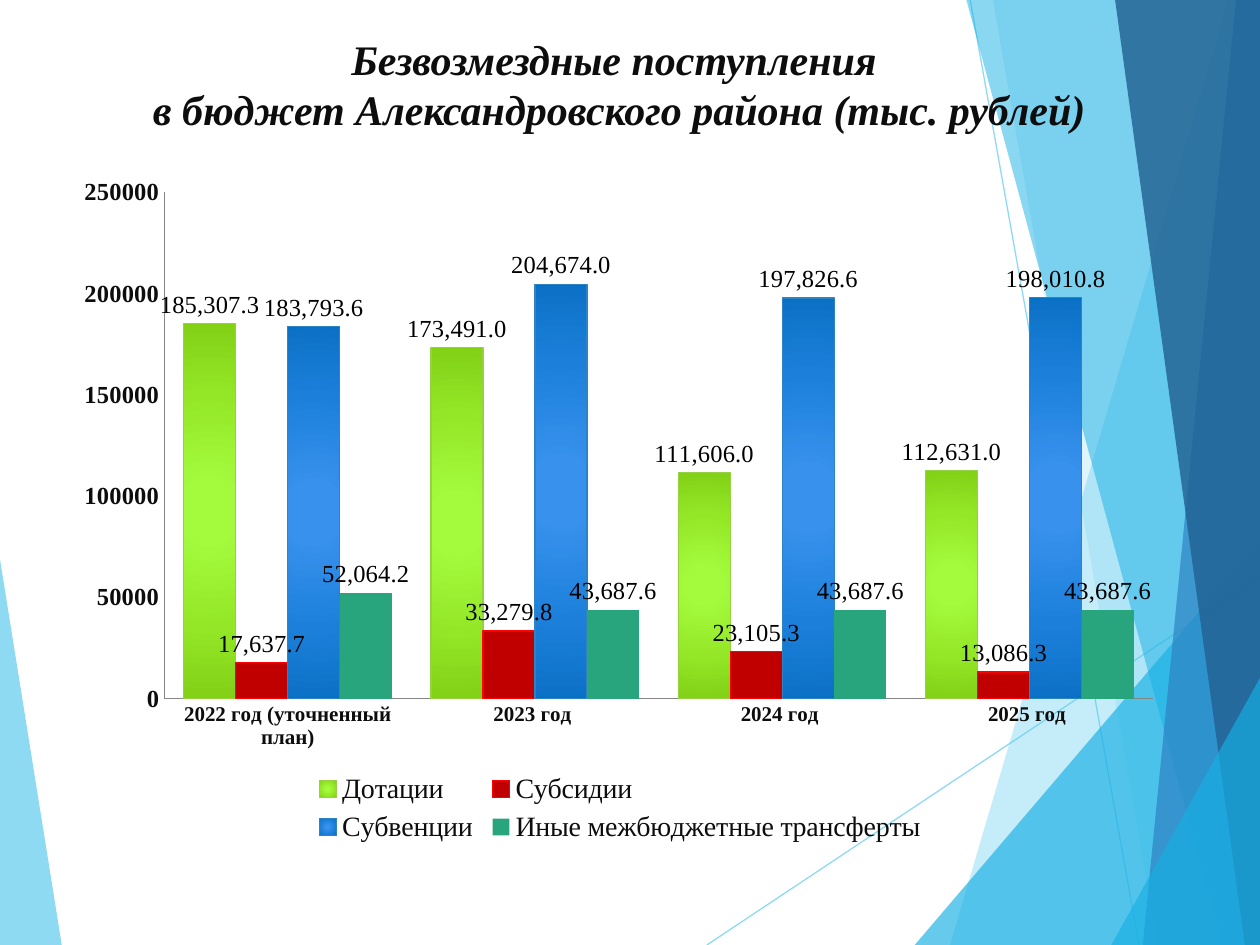
from dataclasses import dataclass

from pptx import Presentation
from pptx import util as u
from pptx.chart.data import CategoryChartData
from pptx.dml.color import RGBColor
from pptx.enum import chart as charts, shapes, text
from pptx.oxml import parse_xml
from pptx.oxml.ns import nsdecls, qn

PX = 9144  # EMU, one hundred px to the inch
WIDTH, HEIGHT = 1000, 750


@dataclass(frozen=True)
class Theme:
    font: str = "Times New Roman"
    ink: str = "0D0D0D"
    label: str = "000000"
    axis: str = "868686"
    sky: str = "5FCBEF"
    cyan: str = "17B0E4"
    blue: str = "2E83C3"
    navy: str = "226292"
    title_size: int = 24
    legend_size: int = 16
    value_size: int = 14
    category_size: int = 12


@dataclass(frozen=True)
class Facet:
    color: str
    opacity: int
    points: tuple[tuple[int, int], ...]


@dataclass(frozen=True)
class Ray:
    start: tuple[int, int]
    end: tuple[int, int]


@dataclass(frozen=True)
class Series:
    name: str
    values: tuple[float, ...]
    stops: tuple[str, ...]
    outline: str | None = None


THEME = Theme()
STOP_PLACES = (0, 15, 62, 97, 100)

LEFT_FACET = Facet(THEME.sky, 70, ((0, 444), (49, 750), (0, 750)))
RAYS = (Ray((561, 750), (1000, 458)), Ray((770, 0), (904, 750)))
RIGHT_FACETS = (
    Facet(THEME.sky, 36, ((975, 0), (754, 750), (1000, 750), (1000, 0))),
    Facet(THEME.sky, 20, ((788, 0), (919, 750), (1000, 750), (1000, 0))),
    Facet(THEME.cyan, 66, ((726, 750), (1000, 429), (1000, 750))),
    Facet(THEME.cyan, 50, ((767, 0), (970, 750), (1000, 750), (1000, 0))),
    Facet(THEME.blue, 70, ((981, 0), (907, 750), (1000, 750), (1000, 0))),
    Facet(THEME.navy, 82, ((885, 0), (988, 750), (1000, 750), (1000, 0))),
    Facet(THEME.cyan, 66, ((882, 750), (1000, 538), (1000, 750))),
)

TITLE = ("Безвозмездные поступления ", "в бюджет Александровского района (тыс. рублей)")
YEARS = ("2022 год (уточненный план)", "2023 год ", "2024 год ", "2025 год ")
SERIES = (
    Series("Дотации", (185307.3, 173491, 111606, 112631),
           ("A5FC3E", "A4FB3E", "93E726", "83D218", "81D30C"), "96D141"),
    Series("Субсидии", (17637.7, 33279.8, 23105.3, 13086.3), ("C00000",), "FF0000"),
    Series("Субвенции", (183793.6, 204674, 197826.6, 198010.8),
           ("3792EE", "3791ED", "1C80DB", "0D72C7", "0070C4"), THEME.blue),
    Series("Иные межбюджетные трансферты", (52064.2, 43687.6, 43687.6, 43687.6), ("29A57D",)),
)


def rgb(color: str) -> RGBColor:
    return RGBColor.from_string(color)


def set_font(font, size: int, color: str, bold: bool = False, italic: bool = False) -> None:
    font.name, font.size, font.bold, font.italic = THEME.font, u.Pt(size), bold, italic
    font.color.rgb = rgb(color)


def set_opacity(color_owner, percent: int) -> None:
    for color in color_owner.iter(qn("a:srgbClr")):
        color.append(parse_xml(f'<a:alpha {nsdecls("a")} val="{percent * 1000}"/>'))


def draw_facet(page, facet: Facet) -> None:
    builder = page.shapes.build_freeform(*facet.points[0], scale=PX)
    builder.add_line_segments(facet.points[1:], close=True)
    shape = builder.convert_to_shape()
    shape.shadow.inherit = False
    shape.fill.solid()
    shape.fill.fore_color.rgb = rgb(facet.color)
    set_opacity(shape._element.spPr, facet.opacity)
    shape.line.fill.background()


def draw_ray(page, ray: Ray) -> None:
    ends = [value * PX for value in ray.start + ray.end]
    line = page.shapes.add_connector(shapes.MSO_CONNECTOR.STRAIGHT, *ends)
    line.line.color.rgb = rgb(THEME.sky)
    line.line.width = u.Pt(0.75)
    set_opacity(line._element.spPr, 70)
    line._element.spPr.append(parse_xml(f'<a:effectLst {nsdecls("a")}/>'))


def write_title(page) -> None:
    title = page.shapes.title
    title.left, title.top, title.width, title.height = (n * PX for n in (35, 21, 913, 91))
    frame = title.text_frame
    frame.auto_size = text.MSO_AUTO_SIZE.NONE
    frame.word_wrap = True
    frame.vertical_anchor = text.MSO_ANCHOR.MIDDLE
    for index, line in enumerate(TITLE):
        para = frame.add_paragraph() if index else frame.paragraphs[0]
        para.alignment = text.PP_ALIGN.CENTER
        span = para.add_run()
        span.text = line
        set_font(span.font, THEME.title_size, THEME.ink, bold=True, italic=True)
    # Bring the title in front of the facets
    title._element.getparent().append(title._element)


def place(element, index: int, x: float, y: float, w: float, h: float, inner: bool = False) -> None:
    """Fix a chart part at fractions of the chart area."""
    for old in element.findall(qn("c:layout")):
        element.remove(old)
    target = '<c:layoutTarget val="inner"/>' if inner else ""
    element.insert(index, parse_xml(
        f'<c:layout {nsdecls("c")}><c:manualLayout>{target}'
        '<c:xMode val="edge"/><c:yMode val="edge"/>'
        f'<c:x val="{x}"/><c:y val="{y}"/><c:w val="{w}"/><c:h val="{h}"/>'
        '</c:manualLayout></c:layout>'))


def fill_radial(fill_owner, stops: tuple[str, ...]) -> None:
    """Swap the solid fill for a gradient running out from the centre."""
    marks = "".join(f'<a:gs pos="{place * 1000}"><a:srgbClr val="{color}"/></a:gs>'
                    for place, color in zip(STOP_PLACES, stops))
    solid = fill_owner.find(qn("a:solidFill"))
    fill_owner.replace(solid, parse_xml(
        f'<a:gradFill {nsdecls("a")} rotWithShape="1"><a:gsLst>{marks}</a:gsLst>'
        '<a:path path="circle"><a:fillToRect l="50000" t="50000" r="50000" b="50000"/>'
        '</a:path></a:gradFill>'))


def style_series(plot_series, series: Series) -> None:
    look = plot_series.format
    look.fill.solid()
    look.fill.fore_color.rgb = rgb(series.stops[0])
    if series.outline:
        look.line.color.rgb = rgb(series.outline)
        look.line.width = u.Pt(0.75)
    if len(series.stops) > 1:
        fill_radial(plot_series._element.spPr, series.stops)
    labels = plot_series.data_labels
    labels.show_value = True
    labels.number_format, labels.number_format_is_linked = "#,##0.0", False
    labels.position = charts.XL_LABEL_POSITION.OUTSIDE_END
    set_font(labels.font, THEME.value_size, THEME.label)


def style_axis(axis, size: int, number_format: str) -> None:
    axis.has_major_gridlines = False
    axis.major_tick_mark = axis.minor_tick_mark = charts.XL_TICK_MARK.NONE
    axis.format.line.color.rgb = rgb(THEME.axis)
    axis.tick_labels.number_format = number_format
    axis.tick_labels.number_format_is_linked = False
    set_font(axis.tick_labels.font, size, THEME.ink, bold=True)


def draw_chart(page) -> None:
    data = CategoryChartData()
    data.categories = YEARS
    for series in SERIES:
        data.add_series(series.name, series.values)
    box = (n * PX for n in (51, 131, 882, 543))
    chart = page.shapes.add_chart(charts.XL_CHART_TYPE.COLUMN_CLUSTERED, *box, data).chart
    set_font(chart.font, 18, THEME.label)
    chart.has_title = False
    plot = chart.plots[0]
    plot.gap_width, plot.overlap, plot.vary_by_categories = 75, 0, False
    for plot_series, series in zip(plot.series, SERIES):
        style_series(plot_series, series)
    style_axis(chart.category_axis, THEME.category_size, "#,##0.00")
    style_axis(chart.value_axis, THEME.value_size, "0")
    scale = chart.value_axis
    scale.minimum_scale, scale.maximum_scale, scale.major_unit = 0, 250000, 50000
    chart.has_legend = True
    legend = chart.legend
    legend.position = charts.XL_LEGEND_POSITION.BOTTOM
    legend.include_in_layout = False
    set_font(legend.font, THEME.legend_size, THEME.ink)
    place(chart._chartSpace.chart.plotArea, 0, 0.09, 0.04, 0.89, 0.74, inner=True)
    place(legend._element, 1, 0.22, 0.88, 0.56, 0.12)


def main() -> None:
    deck = Presentation()
    deck.slide_width, deck.slide_height = WIDTH * PX, HEIGHT * PX
    page = deck.slides.add_slide(deck.slide_layouts.get_by_name("Title Only"))
    draw_facet(page, LEFT_FACET)
    for ray in RAYS:
        draw_ray(page, ray)
    for facet in RIGHT_FACETS:
        draw_facet(page, facet)
    write_title(page)
    draw_chart(page)
    deck.save("out.pptx")


if __name__ == "__main__":
    main()
